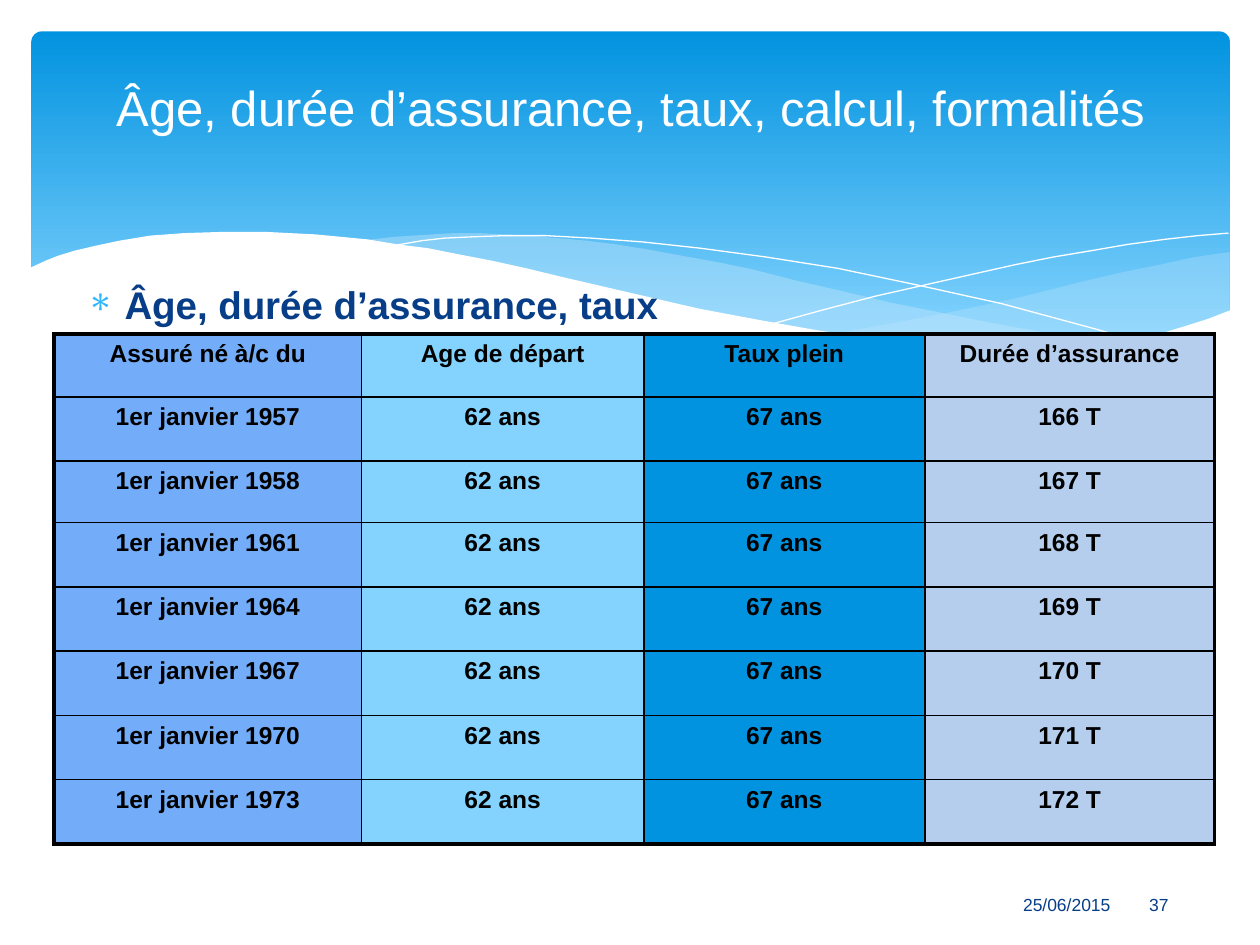
from lxml.etree import SubElement
from pptx import Presentation
from pptx.dml.color import RGBColor
from pptx.enum.shapes import MSO_SHAPE
from pptx.enum.text import MSO_ANCHOR, PP_ALIGN
from pptx.oxml.ns import qn
from pptx.util import Inches, Pt

WIDTH, HEIGHT = Inches(10), Inches(7.5)
FONT = "Arial"
WHITE = RGBColor(0xFF, 0xFF, 0xFF)
BLACK = RGBColor(0x00, 0x00, 0x00)
NAVY = RGBColor(0x07, 0x3E, 0x87)
BLUE = RGBColor(0x02, 0x93, 0xE0)
SKY = RGBColor(0x83, 0xD3, 0xFE)
MIST = RGBColor(0xC6, 0xE7, 0xFC)
BULLET_BLUE = RGBColor(0x31, 0xB6, 0xFD)
COLUMN_FILLS = [RGBColor(0x73, 0xAC, 0xF8), SKY, BLUE, RGBColor(0xB5, 0xCE, 0xED)]

# Table sizes, in percent of the slide
COLUMN_WIDTHS = [24.4, 22.4, 22.3, 23]
ROW_HEIGHTS = [6.67, 6.8, 6.53] + [6.8] * 5
HEADERS = ["Assuré né à/c du", "Age de départ", "Taux plein", "Durée d’assurance"]
BIRTH_YEARS = [1957, 1958, 1961, 1964, 1967, 1970, 1973]
FIRST_DURATION = 166

# Wave points, in thousandths of the slide's width
RIGHT_WAVE = [
    (976, 200), (948, 204), (921, 210), (891, 216), (861, 223), (805, 237),
    (753, 248), (706, 257), (661, 265), (691, 269), (719, 272), (745, 275),
    (769, 277), (803, 278), (835, 277), (863, 275), (889, 272), (913, 267),
    (935, 262), (949, 257), (963, 252), (976, 247)]
MIDDLE_WAVE = [
    (893, 273), (866, 269), (837, 265), (807, 260), (775, 254), (741, 247),
    (706, 240), (668, 231), (629, 222), (598, 214), (569, 208), (541, 203),
    (514, 198), (489, 194), (465, 191), (442, 189), (420, 187), (399, 186),
    (380, 185), (361, 185), (344, 186), (313, 188), (286, 191), (323, 196),
    (362, 203), (404, 211), (449, 222), (491, 232), (530, 240), (566, 248),
    (601, 255), (634, 261), (665, 266), (695, 270), (722, 274), (748, 276),
    (773, 277), (807, 278), (838, 278), (867, 276)]
FALLING_LINE = [
    (309, 195), (318, 194), (335, 191), (353, 189), (374, 188), (401, 187),
    (433, 187), (469, 189), (510, 192), (556, 197), (608, 204), (665, 213),
    (727, 226), (795, 241), (869, 261), (907, 272)]
RISING_LINE = [
    (613, 257), (653, 246), (695, 235), (748, 223), (806, 210), (836, 204),
    (866, 199), (895, 194), (924, 190), (951, 187), (975, 185)]
WHITE_WAVE = [
    (977, 246), (959, 253), (940, 259), (920, 265), (899, 269), (875, 273),
    (850, 275), (823, 277), (793, 276), (761, 275), (726, 272), (688, 268),
    (648, 262), (603, 254), (555, 245), (503, 233), (447, 220), (418, 213),
    (391, 207), (365, 202), (340, 197), (316, 194), (292, 190), (271, 188),
    (250, 186), (230, 185), (211, 184), (177, 184), (146, 185), (119, 187),
    (95, 191), (76, 195), (59, 199), (46, 203), (36, 207), (23, 213),
    (23, 329), (977, 329)]


def across(percent):
    return round(WIDTH * percent / 100)


def down(percent):
    return round(HEIGHT * percent / 100)


def area(left, top, width, height):
    """Position and size from percentages of the slide."""
    return across(left), down(top), across(width), down(height)


def format_paragraph(paragraph, size, color, bold=False, align=PP_ALIGN.CENTER):
    paragraph.alignment = align
    for run in paragraph.runs:
        run.font.name = FONT
        run.font.size = Pt(size)
        run.font.bold = bold
        run.font.color.rgb = color


def add_text(slide, place, text, size, color, anchor=MSO_ANCHOR.MIDDLE, **style):
    frame = slide.shapes.add_textbox(*place).text_frame
    frame.word_wrap = True
    frame.vertical_anchor = anchor
    frame.text = text
    format_paragraph(frame.paragraphs[0], size, color, **style)
    return frame


def add_bullet(paragraph, character, color):
    properties = paragraph._p.get_or_add_pPr()
    properties.set("marL", str(Inches(0.3)))
    properties.set("indent", str(-Inches(0.3)))
    bullet_color = SubElement(properties, qn("a:buClr"))
    SubElement(bullet_color, qn("a:srgbClr"), val=str(color))
    SubElement(properties, qn("a:buChar"), char=character)


def add_tab_stop(paragraph, position):
    tabs = SubElement(paragraph._p.get_or_add_pPr(), qn("a:tabLst"))
    SubElement(tabs, qn("a:tab"), pos=str(position), algn="l")


def add_banner(slide):
    banner = slide.shapes.add_shape(
        MSO_SHAPE.ROUNDED_RECTANGLE, *area(2.5, 3.33, 95.1, 36))
    banner.adjustments[0] = 0.03
    banner.shadow.inherit = False
    banner.line.fill.background()
    banner.fill.gradient()
    banner.fill.gradient_angle = 270
    for stop, position, color in zip(
            banner.fill.gradient_stops, (0, 0.9), (BLUE, SKY)):
        stop.position = position
        stop.color.rgb = color


def add_outline(slide, points, close):
    builder = slide.shapes.build_freeform(*points[0], scale=WIDTH / 1000)
    builder.add_line_segments(points[1:], close=close)
    shape = builder.convert_to_shape()
    shape.shadow.inherit = False
    return shape


def add_wave(slide, points, color, opacity=100):
    wave = add_outline(slide, points, close=True)
    wave.line.fill.background()
    wave.fill.solid()
    wave.fill.fore_color.rgb = color
    if opacity < 100:
        color_element = wave._element.spPr.find(qn("a:solidFill"))[0]
        SubElement(color_element, qn("a:alpha"), val=str(opacity * 1000))


def add_hairline(slide, points):
    hairline = add_outline(slide, points, close=False)
    hairline.fill.background()
    hairline.line.color.rgb = WHITE
    hairline.line.width = Pt(0)


def add_border(cell, side, width):
    """Draw one side; must come before the cell's fill."""
    line = SubElement(cell._tc.get_or_add_tcPr(), qn(f"a:ln{side}"), w=str(Pt(width)))
    SubElement(SubElement(line, qn("a:solidFill")), qn("a:srgbClr"), val=str(BLACK))


def add_pension_table(slide):
    rows = [HEADERS] + [
        [f"1er janvier {year}", "62 ans", "67 ans", f"{FIRST_DURATION + step} T"]
        for step, year in enumerate(BIRTH_YEARS)]
    last_row, last_column = len(rows) - 1, len(HEADERS) - 1
    table = slide.shapes.add_table(
        len(rows), len(HEADERS), *area(4.3, 35.33, 92.1, 54.13)).table
    for column, width in zip(table.columns, COLUMN_WIDTHS):
        column.width = across(width)
    for row, height in zip(table.rows, ROW_HEIGHTS):
        row.height = down(height)
    for i, texts in enumerate(rows):
        for j, text in enumerate(texts):
            cell = table.cell(i, j)
            cell.text = text
            format_paragraph(cell.text_frame.paragraphs[0], 14, BLACK, bold=True)
            outer = {"L": j == 0, "R": j == last_column,
                     "T": i == 0, "B": i == last_row}
            for side, is_outer in outer.items():
                add_border(cell, side, 2.25 if is_outer else 1)
            cell.fill.solid()
            cell.fill.fore_color.rgb = COLUMN_FILLS[j]


def main():
    presentation = Presentation()
    presentation.slide_width, presentation.slide_height = WIDTH, HEIGHT
    slide = presentation.slides.add_slide(presentation.slide_layouts[6])

    add_banner(slide)
    add_wave(slide, RIGHT_WAVE, MIST, opacity=29)
    add_wave(slide, MIDDLE_WAVE, MIST, opacity=40)
    add_hairline(slide, FALLING_LINE)
    add_hairline(slide, RISING_LINE)
    add_wave(slide, WHITE_WAVE, WHITE)

    add_text(slide, area(2.8, 5.87, 94.5, 10.8),
             "Âge, durée d’assurance, taux, calcul, formalités", 28, WHITE)
    heading = add_text(slide, area(5.9, 29.07, 90.6, 7.33),
                       "Âge, durée d’assurance, taux", 22, NAVY,
                       anchor=MSO_ANCHOR.TOP, bold=True, align=PP_ALIGN.LEFT)
    add_bullet(heading.paragraphs[0], "∗", BULLET_BLUE)
    add_pension_table(slide)

    footer = add_text(slide, area(76, 92.8, 22, 5.87), "25/06/2015\t37", 10, NAVY,
                      align=PP_ALIGN.LEFT)
    footer.margin_left = across(5.2)
    add_tab_stop(footer.paragraphs[0], across(10))

    presentation.save("out.pptx")


if __name__ == "__main__":
    main()
